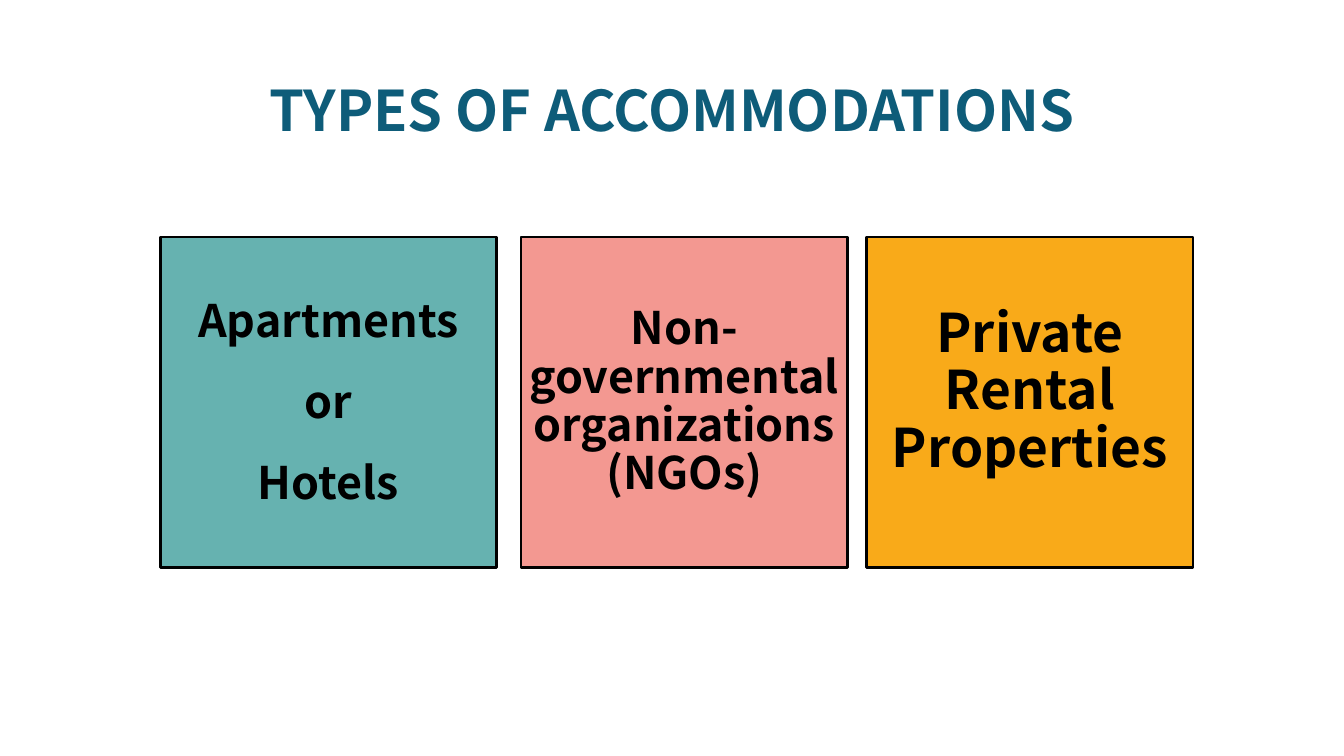
from pptx import Presentation
from pptx.dml.color import RGBColor
from pptx.enum.shapes import MSO_SHAPE
from pptx.enum.text import MSO_ANCHOR, PP_ALIGN
from pptx.util import Cm, Pt

FONT = "Noto Sans CJK TC"


def color(value):
    return RGBColor.from_string(value)


def format_paragraph(paragraph, size, text_color, line_spacing):
    paragraph.alignment = PP_ALIGN.CENTER
    paragraph.line_spacing = line_spacing
    for run in paragraph.runs:
        run.font.name = FONT
        run.font.size = Pt(size)
        run.font.bold = True
        run.font.color.rgb = color(text_color)


presentation = Presentation()
presentation.slide_width = Cm(33.87)
presentation.slide_height = Cm(19.05)
slide = presentation.slides.add_slide(presentation.slide_layouts[6])

title = slide.shapes.add_textbox(Cm(2.33), Cm(1.02), Cm(29.21), Cm(3.68))
title.text_frame.word_wrap = True
title.text_frame.vertical_anchor = MSO_ANCHOR.MIDDLE
title.text_frame.text = "TYPES OF ACCOMMODATIONS"
format_paragraph(title.text_frame.paragraphs[0], 40, "0E5C79", 0.9)

cards = [
    (4.04, 8.48, "66B2B0", 32, 29, "Apartments\nor\nHotels"),
    (13.13, 8.23, "F39891", 32, 34.5, "Non-governmental organizations (NGOs)"),
    (21.84, 8.23, "F9AA19", 38, 41, "Private Rental Properties"),
]
for left, width, fill, size, line_height, text in cards:
    card = slide.shapes.add_shape(
        MSO_SHAPE.RECTANGLE, Cm(left), Cm(5.97), Cm(width), Cm(8.33)
    )
    card.shadow.inherit = False
    card.fill.solid()
    card.fill.fore_color.rgb = color(fill)
    card.line.color.rgb = color("000000")
    card.line.width = Pt(1.75)

    text_frame = card.text_frame
    text_frame.word_wrap = True
    text_frame.vertical_anchor = MSO_ANCHOR.TOP
    text_frame.margin_left = text_frame.margin_right = text_frame.margin_bottom = 0
    text_frame.margin_top = Cm(1.73)
    text_frame.text = text
    for index, paragraph in enumerate(text_frame.paragraphs):
        format_paragraph(paragraph, size, "000000", Pt(line_height))
        if index > 0:
            paragraph.space_before = Pt(line_height)

presentation.save("out.pptx")
